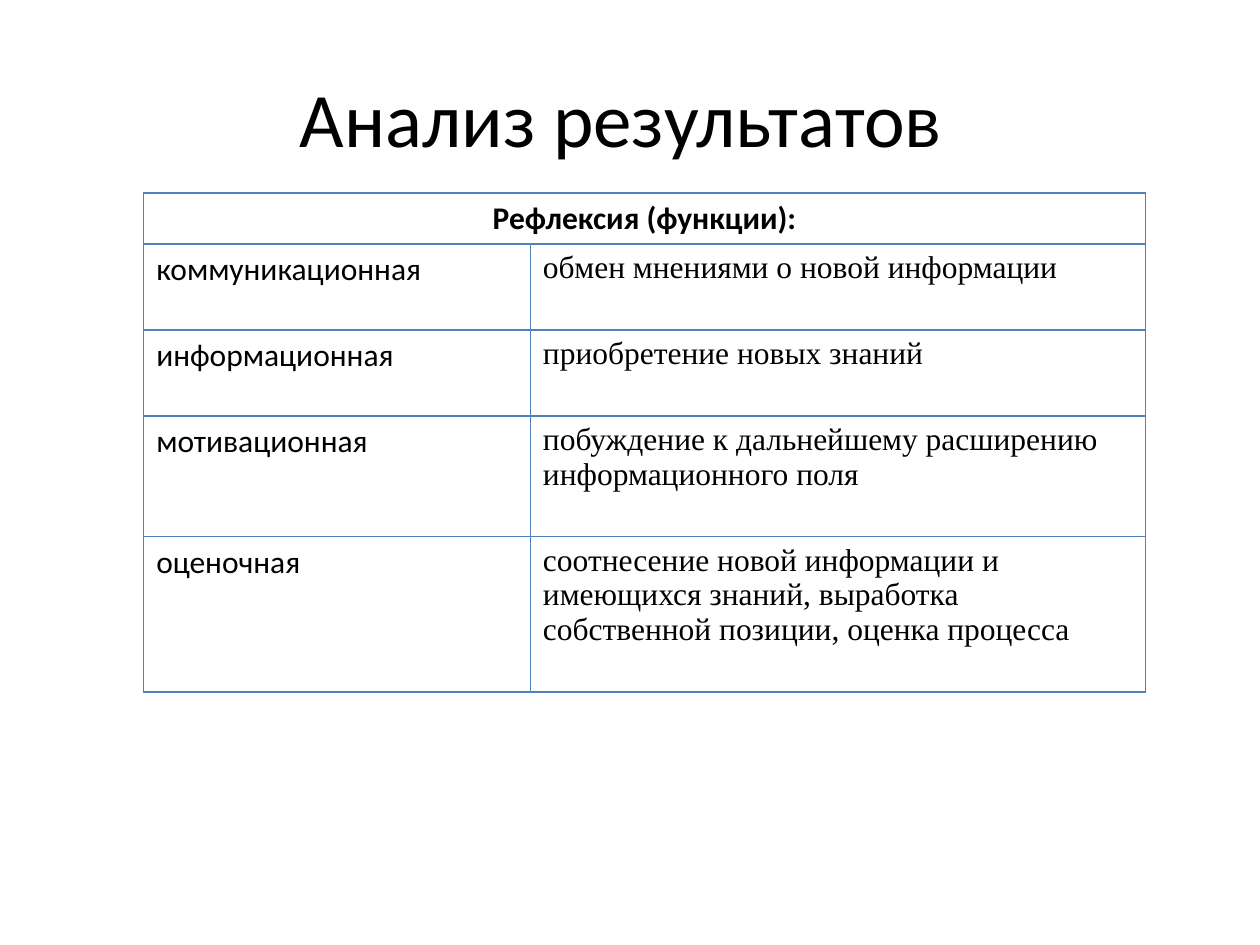
from pptx import Presentation
from pptx.dml.color import RGBColor
from pptx.enum.text import MSO_ANCHOR, PP_ALIGN
from pptx.oxml.ns import qn
from pptx.util import Pt
from lxml.etree import SubElement

TITLE = "Анализ результатов "
HEAD = "Рефлексия (функции):"
ROWS = [
    ("коммуникационная", "обмен мнениями о новой информации"),
    ("информационная", "приобретение новых знаний"),
    ("мотивационная", "побуждение к дальнейшему расширению информационного поля"),
    ("оценочная", "соотнесение новой информации и имеющихся знаний, "
                  "выработка собственной позиции, оценка процесса"),
]
COLORS = {"text": "000000", "fill": "FFFFFF", "border": "4F81BD"}
FONTS = ("Calibri", "Times New Roman")
WIDTHS = (221, 351.4)
HEIGHTS = (29.2, 49.1, 49.1, 69.1, 88.8)
LEFT, TOP = 82.1, 110.2


def write(frame, text, font="Calibri", size=18, bold=False, align=PP_ALIGN.LEFT):
    para = frame.paragraphs[0]
    para.alignment = align
    run = para.add_run()
    run.text = text
    run.font.name = font
    run.font.size = Pt(size)
    run.font.bold = bold
    run.font.color.rgb = RGBColor.from_string(COLORS["text"])


def frame_cell(cell):
    """Give the cell thin lines on all sides and a plain fill."""
    props = cell._tc.get_or_add_tcPr()
    for side in ("lnL", "lnR", "lnT", "lnB"):
        line = SubElement(props, qn(f"a:{side}"), w=str(Pt(1)))
        solid = SubElement(line, qn("a:solidFill"))
        SubElement(solid, qn("a:srgbClr"), val=COLORS["border"])
    cell.fill.solid()
    cell.fill.fore_color.rgb = RGBColor.from_string(COLORS["fill"])


def add_grid(slide):
    shape = slide.shapes.add_table(len(HEIGHTS), len(WIDTHS), Pt(LEFT), Pt(TOP),
                                   Pt(sum(WIDTHS)), Pt(sum(HEIGHTS)))
    table = shape.table
    table.horz_banding = False
    table.first_row = False
    for col, width in zip(table.columns, WIDTHS):
        col.width = Pt(width)
    for row, height in zip(table.rows, HEIGHTS):
        row.height = Pt(height)
        for cell in row.cells:
            frame_cell(cell)
    head = table.cell(0, 0)
    head.merge(table.cell(0, 1))
    write(head.text_frame, HEAD, bold=True, align=PP_ALIGN.CENTER)
    for r, texts in enumerate(ROWS, 1):
        for c, (text, font) in enumerate(zip(texts, FONTS)):
            write(table.cell(r, c).text_frame, text, font=font)


def main():
    deck = Presentation()
    deck.slide_width, deck.slide_height = Pt(720), Pt(540)
    slide = deck.slides.add_slide(deck.slide_layouts[5])
    title = slide.shapes.title
    title.left, title.top, title.width, title.height = Pt(36), Pt(21.6), Pt(648), Pt(90)
    title.text_frame.vertical_anchor = MSO_ANCHOR.MIDDLE
    write(title.text_frame, TITLE, size=44, align=PP_ALIGN.CENTER)
    add_grid(slide)
    deck.save("out.pptx")


if __name__ == "__main__":
    main()
